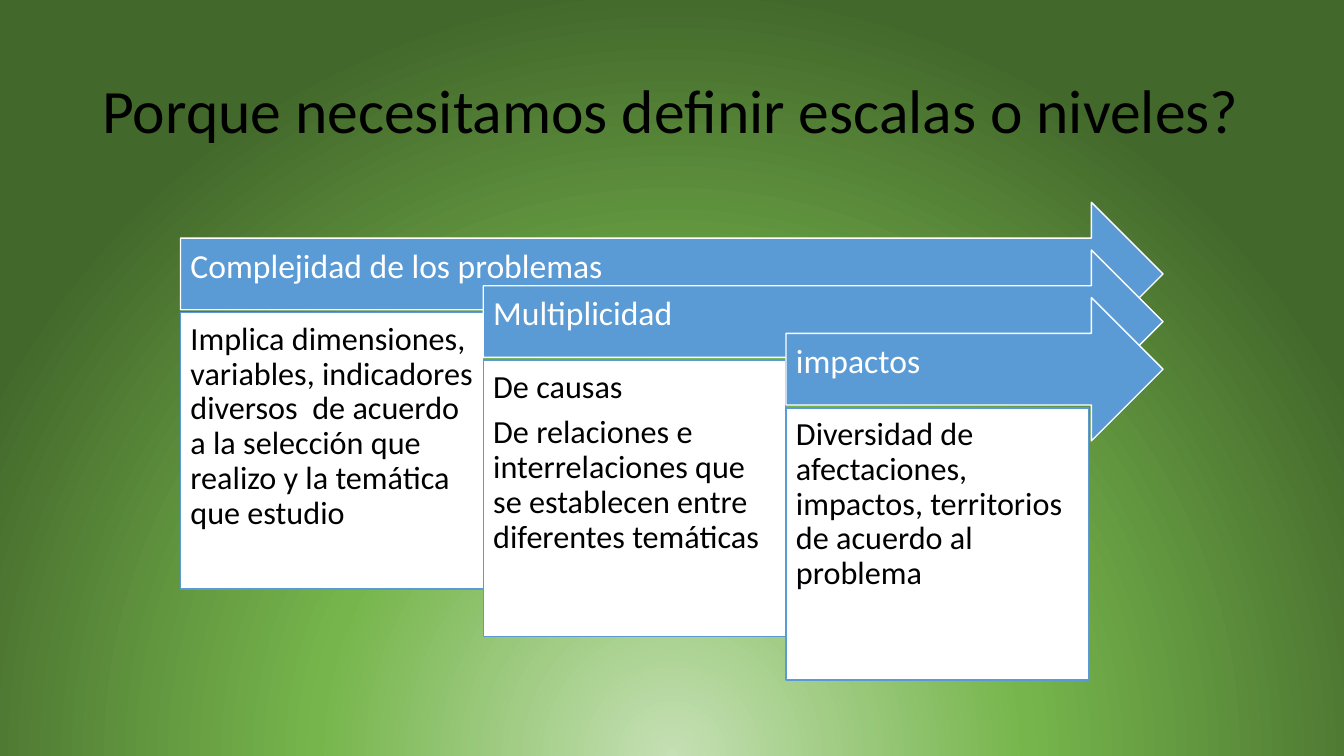
from dataclasses import dataclass

from pptx import Presentation
from pptx.dml.color import RGBColor
from pptx.enum.shapes import MSO_SHAPE
from pptx.enum.text import MSO_ANCHOR, PP_ALIGN
from pptx.oxml import parse_xml
from pptx.oxml.ns import nsdecls
from pptx.shapes.autoshape import Shape
from pptx.slide import Slide
from pptx.util import Cm, Pt

ARROW = MSO_SHAPE.RIGHT_ARROW
RECTANGLE = MSO_SHAPE.RECTANGLE
TOP, MIDDLE = MSO_ANCHOR.TOP, MSO_ANCHOR.MIDDLE
LEFT = PP_ALIGN.LEFT


@dataclass(frozen=True)
class Theme:
    font: str = "Calibri"
    ink: str = "000000"
    paper: str = "FFFFFF"
    accent: str = "5B9BD5"
    background: tuple[tuple[int, str], ...] = (
        (0, "C5E0B4"), (46, "76B54C"), (100, "43682B"))
    title_size: int = 44
    heading_size: int = 24
    body_size: int = 23


@dataclass(frozen=True)
class Stage:
    heading: str
    details: tuple[str, ...]
    body_height: float


THEME = Theme()
STAGES = (
    Stage("Complejidad de los problemas",
          ("Implica dimensiones, variables, indicadores diversos  de acuerdo "
           "a la selección que realizo y la temática que estudio",), 6.96),
    Stage("Multiplicidad",
          ("De causas",
           "De relaciones e interrelaciones que se establecen entre "
           "diferentes temáticas"), 6.96),
    Stage("impactos",
          ("Diversidad de afectaciones, impactos, territorios de acuerdo "
           "al problema",), 6.86),
)

# Layout, in centimetres
STAGE_LEFT, STAGE_TOP = 4.55, 5.1
STAGE_WIDTH, STAGE_DROP = 7.63, 1.2
ARROW_TIP, ARROW_HEIGHT = 29.31, 3.61
BODY_OFFSET = 2.78
TITLE_INSETS = (0.25, 0.13, 0.25, 0.13)
ARROW_INSETS = (0.25, 0.25, 0.71, 0.58)
BODY_INSETS = (0.25, 0.25, 0.25, 0.25)


def paint_background(page: Slide) -> None:
    """Fill the page with a radial gradient centred below its lower edge."""
    stops = "".join(
        f'<a:gs pos="{percent * 1000}"><a:srgbClr val="{color}"/></a:gs>'
        for percent, color in THEME.background)
    background = parse_xml(
        f'<p:bg {nsdecls("p", "a")}><p:bgPr><a:gradFill rotWithShape="1">'
        f'<a:gsLst>{stops}</a:gsLst><a:path path="circle">'
        '<a:fillToRect l="50000" t="130000" r="50000" b="-30000"/>'
        '</a:path></a:gradFill><a:effectLst/></p:bgPr></p:bg>')
    page.element.cSld.insert(0, background)


def write_text(box: Shape, *lines: str, size: int, color: str,
               insets: tuple[float, float, float, float],
               anchor: MSO_ANCHOR = TOP, space_after: float = 0) -> None:
    frame = box.text_frame
    frame.word_wrap = True
    frame.vertical_anchor = anchor
    (frame.margin_left, frame.margin_top,
     frame.margin_right, frame.margin_bottom) = map(Cm, insets)
    for index, line in enumerate(lines):
        para = frame.add_paragraph() if index else frame.paragraphs[0]
        para.alignment = LEFT
        para.line_spacing = 0.9
        para.space_after = Pt(space_after)
        span = para.add_run()
        span.text = line
        span.font.name = THEME.font
        span.font.size = Pt(size)
        span.font.color.rgb = RGBColor.from_string(color)


def add_block(page: Slide, kind: MSO_SHAPE, left: float, top: float,
              width: float, height: float, *, fill: str, line: str) -> Shape:
    block = page.shapes.add_shape(kind, Cm(left), Cm(top), Cm(width), Cm(height))
    block.shadow.inherit = False
    block.fill.solid()
    block.fill.fore_color.rgb = RGBColor.from_string(fill)
    block.line.color.rgb = RGBColor.from_string(line)
    block.line.width = Pt(1)
    return block


def add_stage(page: Slide, stage: Stage, position: int) -> None:
    """Draw an arrow with its details below, one step right and down each time."""
    left = STAGE_LEFT + position * STAGE_WIDTH
    top = STAGE_TOP + position * STAGE_DROP
    arrow = add_block(page, ARROW, left, top, ARROW_TIP - left, ARROW_HEIGHT,
                      fill=THEME.accent, line=THEME.paper)
    write_text(arrow, stage.heading, size=THEME.heading_size, color=THEME.paper,
               insets=ARROW_INSETS, anchor=MIDDLE, space_after=8)
    body = add_block(page, RECTANGLE, left, top + BODY_OFFSET, STAGE_WIDTH,
                     stage.body_height, fill=THEME.paper, line=THEME.accent)
    write_text(body, *stage.details, size=THEME.body_size, color=THEME.ink,
               insets=BODY_INSETS, space_after=8)


def main() -> None:
    deck = Presentation()
    deck.slide_width, deck.slide_height = Cm(33.87), Cm(19.05)
    page = deck.slides.add_slide(deck.slide_layouts[6])
    paint_background(page)
    title = page.shapes.add_textbox(Cm(2.33), Cm(1.01), Cm(29.21), Cm(3.68))
    write_text(title, "Porque necesitamos definir escalas o niveles?",
               size=THEME.title_size, color=THEME.ink,
               insets=TITLE_INSETS, anchor=MIDDLE)
    for position, stage in enumerate(STAGES):
        add_stage(page, stage, position)
    deck.save("out.pptx")


if __name__ == "__main__":
    main()
